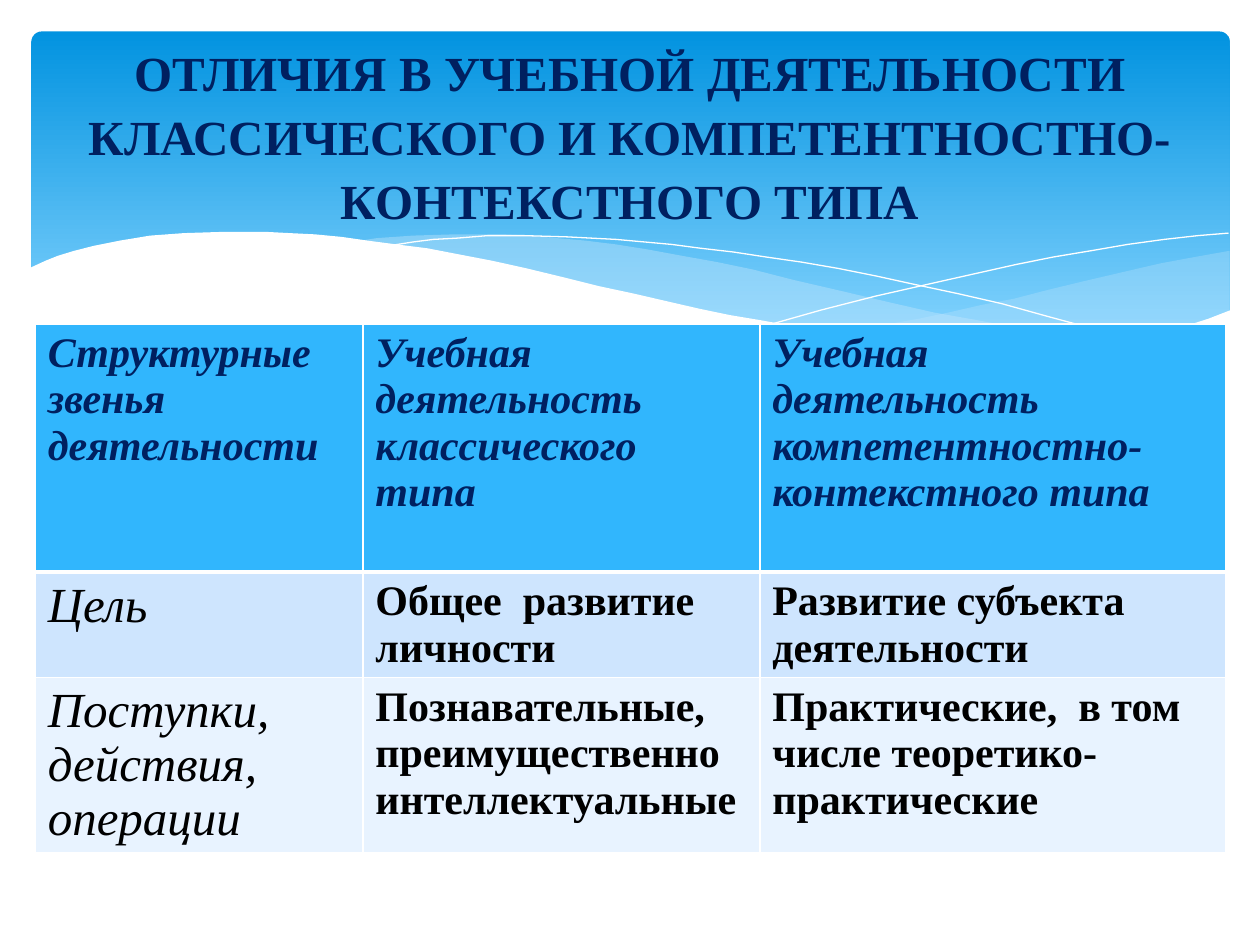
from lxml.etree import SubElement
from pptx import Presentation
from pptx.dml.color import RGBColor
from pptx.enum.shapes import MSO_SHAPE as SHAPE
from pptx.enum.text import MSO_ANCHOR as ANCHOR, PP_ALIGN as ALIGN
from pptx.oxml.ns import qn
from pptx.util import Emu, Pt

SCALE = 9144
FONT = "Times New Roman"
NAVY, BLACK, WHITE = "002060", "000000", "FFFFFF"
WAVE = "C6E7FC"
TITLE = ("ОТЛИЧИЯ В УЧЕБНОЙ ДЕЯТЕЛЬНОСТИ КЛАССИЧЕСКОГО "
         "И КОМПЕТЕНТНОСТНО-КОНТЕКСТНОГО ТИПА")

RIGHT_WAVE = [
    (976, 199), (948, 204), (921, 209), (891, 216), (861, 223), (832, 230),
    (805, 237), (779, 242), (753, 248), (729, 253), (706, 257), (683, 261),
    (661, 265), (691, 269), (718, 272), (745, 275), (769, 277), (803, 278),
    (835, 277), (863, 275), (889, 272), (913, 267), (935, 261), (949, 257),
    (963, 252), (976, 247)]
MIDDLE_WAVE = [
    (893, 273), (866, 269), (837, 265), (807, 260), (775, 254), (741, 248),
    (706, 240), (668, 231), (629, 222), (598, 214), (569, 208), (541, 203),
    (514, 198), (489, 194), (465, 191), (442, 189), (420, 187), (399, 186),
    (361, 186), (328, 187), (299, 189), (286, 191), (323, 196), (362, 203),
    (404, 211), (449, 222), (491, 232), (530, 240), (566, 248), (601, 255),
    (634, 261), (665, 266), (695, 270), (722, 274), (748, 276), (785, 278),
    (828, 278), (867, 276)]
FALLING_CURVE = [
    (309, 195), (328, 192), (344, 190), (363, 189), (387, 187), (416, 187),
    (450, 188), (489, 190), (533, 194), (556, 197), (582, 200), (608, 204),
    (636, 208), (665, 213), (695, 219), (727, 226), (760, 233), (795, 241),
    (831, 251), (868, 261), (907, 272)]
RISING_CURVE = [
    (613, 257), (652, 246), (695, 235), (748, 223), (806, 210), (836, 204),
    (866, 199), (895, 194), (924, 190), (951, 187), (975, 185)]
WHITE_WAVE = [
    (977, 246), (959, 253), (940, 259), (920, 265), (899, 269), (875, 273),
    (850, 275), (823, 277), (793, 276), (761, 275), (726, 272), (688, 268),
    (647, 262), (603, 254), (579, 250), (555, 245), (529, 239), (503, 233),
    (475, 227), (447, 220), (418, 213), (391, 207), (365, 202), (339, 197),
    (315, 194), (292, 191), (271, 188), (250, 186), (230, 185), (211, 184),
    (177, 184), (146, 185), (119, 187), (95, 191), (75, 195), (59, 199),
    (46, 203), (36, 207), (23, 213), (23, 329), (977, 329)]

COLUMNS = [260, 315, 370]
ROWS = [
    (197, "31B6FD", ["Структурные звенья деятельности",
                     "Учебная\nдеятельность классического типа",
                     "Учебная\nдеятельность компетентностно-контекстного типа"]),
    (83, "CEE5FE", ["Цель",
                    "Общее  развитие личности",
                    "Развитие субъекта деятельности"]),
    (139, "E8F3FF", ["Поступки,\nдействия,\nоперации",
                     "Познавательные, преимущественно интеллектуальные",
                     "Практические,  в том числе теоретико-\nпрактические"]),
]


def px(n):
    return Emu(n * SCALE)


def rgb(color):
    return RGBColor.from_string(color)


def style_text(tf, size, color, bold, italic=False):
    for p in tf.paragraphs:
        for r in p.runs:
            r.font.name = FONT
            r.font.size = Pt(size)
            r.font.bold = bold
            r.font.italic = italic
            r.font.color.rgb = rgb(color)


def add_banner(s):
    sp = s.shapes.add_shape(SHAPE.ROUNDED_RECTANGLE, px(25), px(25), px(951), px(270))
    sp.adjustments[0] = 0.03
    sp.shadow.inherit = False
    sp.line.fill.background()
    sp.fill.gradient()
    sp.fill.gradient_angle = 270
    stops = [(0, "0293E0"), (0.9, "83D3FE")]
    for stop, (position, color) in zip(sp.fill.gradient_stops, stops):
        stop.position = position
        stop.color.rgb = rgb(color)


def add_outline(s, points, closed):
    builder = s.shapes.build_freeform(*points[0], scale=SCALE)
    builder.add_line_segments(points[1:], close=closed)
    sp = builder.convert_to_shape()
    sp.shadow.inherit = False
    return sp


def add_wave(s, points, color, opacity=100):
    sp = add_outline(s, points, True)
    sp.line.fill.background()
    sp.fill.solid()
    sp.fill.fore_color.rgb = rgb(color)
    if opacity < 100:
        clr = sp._element.spPr.find(".//" + qn("a:srgbClr"))
        SubElement(clr, qn("a:alpha"), val=str(opacity * 1000))


def add_curve(s, points):
    sp = add_outline(s, points, False)
    sp.fill.background()
    sp.line.color.rgb = rgb(WHITE)
    sp.line.width = Pt(0)


def set_borders(cell, top, bottom):
    tcPr = cell._tc.get_or_add_tcPr()
    widths = [("a:lnL", 1), ("a:lnR", 1), ("a:lnT", top), ("a:lnB", bottom)]
    for i, (tag, width) in enumerate(widths):
        ln = SubElement(tcPr, qn(tag), w=str(Pt(width)))
        SubElement(SubElement(ln, qn("a:solidFill")), qn("a:srgbClr"), val=WHITE)
        tcPr.insert(i, ln)


def add_comparison(s):
    heights = [height for height, _, _ in ROWS]
    table = s.shapes.add_table(len(ROWS), len(COLUMNS), px(28), px(257),
                               px(sum(COLUMNS)), px(sum(heights))).table
    for column, width in zip(table.columns, COLUMNS):
        column.width = px(width)
    for i, (height, fill, texts) in enumerate(ROWS):
        table.rows[i].height = px(height)
        header = i == 0
        for j, text in enumerate(texts):
            cell = table.cell(i, j)
            cell.fill.solid()
            cell.fill.fore_color.rgb = rgb(fill)
            set_borders(cell, 3 if i == 1 else 1, 3 if header else 1)
            cell.text = text
            label = j == 0 and not header
            style_text(cell.text_frame, 28 if label else 24,
                       NAVY if header else BLACK, not label, header or label)


def add_title(s):
    tf = s.shapes.add_textbox(px(50), px(37), px(900), px(137)).text_frame
    tf.word_wrap = True
    tf.vertical_anchor = ANCHOR.MIDDLE
    tf.text = TITLE
    p = tf.paragraphs[0]
    p.alignment = ALIGN.CENTER
    p.line_spacing = 1.09
    style_text(tf, 28, NAVY, True)


def main():
    prs = Presentation()
    prs.slide_width, prs.slide_height = px(1000), px(750)
    s = prs.slides.add_slide(prs.slide_layouts[6])
    add_banner(s)
    add_wave(s, RIGHT_WAVE, WAVE, 29)
    add_wave(s, MIDDLE_WAVE, WAVE, 40)
    add_curve(s, FALLING_CURVE)
    add_curve(s, RISING_CURVE)
    add_wave(s, WHITE_WAVE, WHITE)
    add_comparison(s)
    add_title(s)
    prs.save("out.pptx")


if __name__ == "__main__":
    main()
